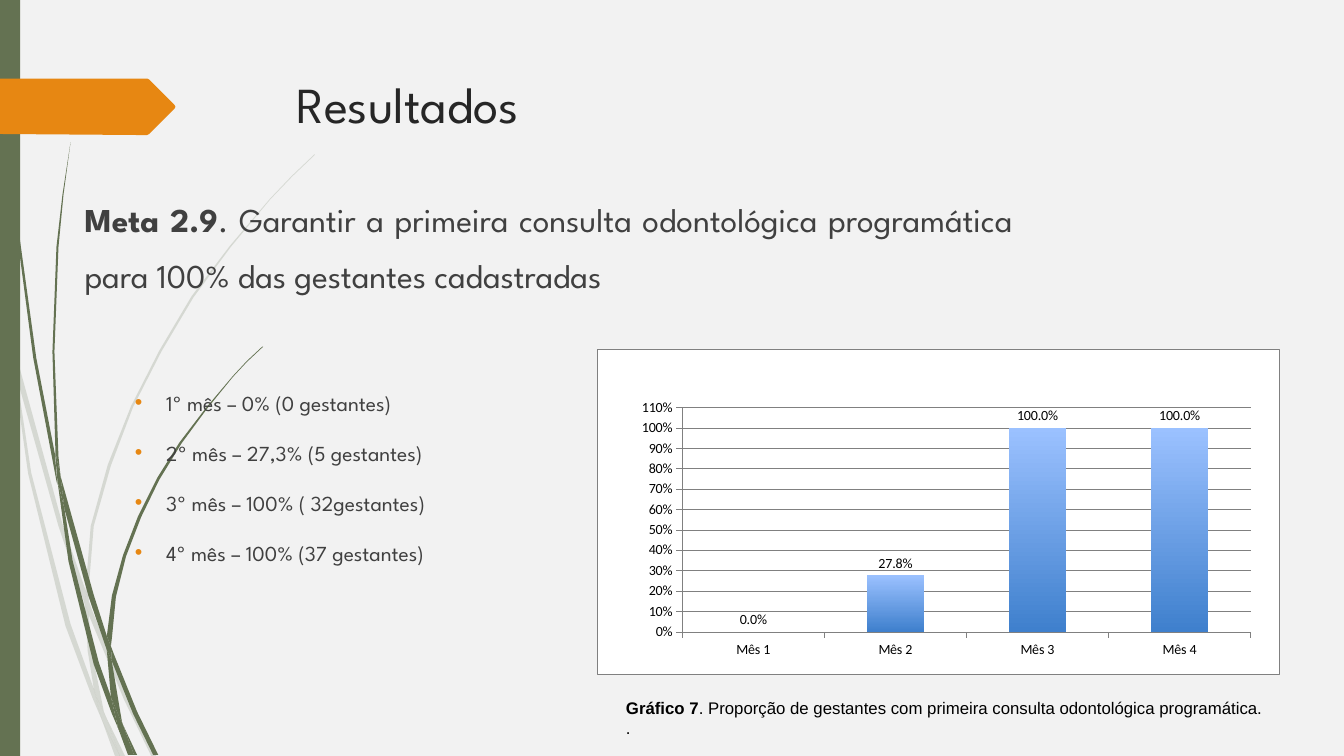
from dataclasses import dataclass

from lxml.etree import SubElement
from pptx import Presentation
from pptx.chart.data import CategoryChartData
from pptx.dml.color import RGBColor
from pptx.enum.chart import XL_CHART_TYPE as ChartType, XL_LABEL_POSITION as LabelPosition
from pptx.enum.chart import XL_TICK_MARK as TickMark
from pptx.enum.shapes import MSO_SHAPE as Preset
from pptx.enum.text import PP_ALIGN as Align
from pptx.oxml import parse_xml
from pptx.oxml.ns import nsdecls, qn
from pptx.util import Pt

PX = 9144
GREEN, ORANGE, GREY = "647252", "E78712", "808080"
BODY_GREY, BLACK, WHITE = "404040", "000000", "FFFFFF"
HEADING_FONT, CAPTION_FONT, CHART_FONT = "League Spartan", "Arial", "Calibri"
Points = tuple[tuple[int, int], ...]


@dataclass(frozen=True)
class Grass:
    opacity: int
    blades: tuple[Points, ...]


@dataclass(frozen=True)
class Style:
    font: str
    size: float
    color: str


@dataclass(frozen=True)
class Box:
    left: int
    top: int
    width: int
    height: int

    def emu(self) -> tuple[int, int, int, int]:
        return self.left * PX, self.top * PX, self.width * PX, self.height * PX


PALE_GRASS = Grass(20, (
    ((11, 350), (9, 322), (0, 282), (0, 299), (10, 344)),
    ((58, 522), (84, 599), (85, 586), (62, 520), (14, 345), (17, 376)),
    ((92, 607), (88, 596), (88, 610), (123, 694), (150, 750), (155, 750), (127, 692)),
    ((119, 750), (124, 750), (105, 711)),
    ((93, 683), (70, 619), (31, 469), (17, 376), (11, 350), (28, 470), (65, 621),
     (92, 693), (101, 714), (99, 707)),
    ((84, 599), (87, 646), (93, 683), (96, 692), (105, 711), (103, 706), (91, 646),
     (88, 610), (88, 608)),
    ((88, 584), (93, 522), (110, 462), (132, 404), (160, 349), (192, 295), (229, 245),
     (268, 198), (290, 175), (312, 154), (312, 153), (289, 175), (268, 197), (228, 244),
     (190, 294), (158, 348), (130, 403), (107, 461), (90, 522), (85, 584), (85, 586),
     (88, 596)),
    ((101, 714), (114, 750), (119, 750)),
    ((88, 608), (88, 610), (88, 596), (85, 586), (84, 599)),
    ((96, 692), (93, 683), (99, 707), (101, 714), (119, 750), (105, 711)),
))

DARK_GRASS = Grass(100, (
    ((7, 110), (17, 233), (33, 355), (56, 477), (57, 481), (55, 457), (55, 453),
     (36, 355), (19, 232), (8, 109), (5, 48), (4, 0), (3, 0), (4, 48)),
    ((88, 592), (106, 645), (106, 633), (106, 631), (93, 590), (60, 472), (64, 505)),
    ((113, 649), (110, 641), (111, 656), (132, 708), (152, 749), (157, 749), (136, 706)),
    ((110, 691), (98, 657), (72, 556), (64, 505), (57, 477), (68, 557), (93, 659),
     (111, 708), (117, 722), (116, 717)),
    ((60, 472), (58, 453), (54, 349), (58, 245), (63, 193), (70, 141), (62, 193),
     (56, 245), (52, 349), (55, 449)),
    ((133, 749), (136, 749), (122, 719)),
    ((57, 477), (64, 505), (60, 472), (55, 449), (55, 453)),
    ((111, 633), (115, 592), (125, 552), (140, 513), (158, 476), (180, 440), (205, 406),
     (231, 374), (245, 359), (261, 344), (260, 344), (245, 358), (231, 373), (204, 405),
     (178, 439), (156, 474), (137, 512), (122, 551), (111, 591), (106, 631), (110, 641)),
    ((117, 722), (127, 749), (131, 749)),
    ((106, 645), (110, 691), (116, 706), (122, 719), (121, 716), (111, 656), (109, 651)),
    ((106, 645), (109, 651), (111, 656), (110, 641), (106, 631), (106, 633)),
    ((116, 706), (110, 691), (116, 717), (117, 722), (130, 749), (133, 749), (122, 719)),
))

ARROW: Points = ((0, 78), (146, 78), (148, 79), (173, 104), (174, 106), (173, 108),
                 (148, 133), (146, 134), (136, 134), (0, 133))

MONTHLY_RESULTS = (
    "1º mês – 0% (0 gestantes)",
    "2º mês – 27,3% (5 gestantes)",
    "3º mês – 100% ( 32gestantes)",
    "4º mês – 100% (37 gestantes)",
)


def rgb(color: str) -> RGBColor:
    return RGBColor.from_string(color)


def paint(shape, color: str, opacity: int = 100) -> None:
    shape.shadow.inherit = False
    shape.fill.solid()
    shape.fill.fore_color.rgb = rgb(color)
    shape.line.fill.background()
    if opacity < 100:
        tint = shape.element.spPr.find(".//" + qn("a:srgbClr"))
        SubElement(tint, qn("a:alpha"), val=str(opacity * 1000))


def draw_outline(shapes, points: Points, color: str, opacity: int = 100) -> None:
    builder = shapes.build_freeform(*points[0], scale=PX)
    builder.add_line_segments(points[1:], close=True)
    paint(builder.convert_to_shape(), color, opacity)


def draw_grass(slide, grass: Grass) -> None:
    clump = slide.shapes.add_group_shape()
    for blade in grass.blades:
        draw_outline(clump.shapes, blade, GREEN, grass.opacity)


def add_frame(slide, box: Box):
    frame = slide.shapes.add_textbox(*box.emu()).text_frame
    frame.word_wrap = True
    return frame


def add_run(paragraph, text: str, style: Style, bold: bool = False) -> None:
    run = paragraph.add_run()
    run.text = text
    run.font.name, run.font.size, run.font.bold = style.font, Pt(style.size), bold
    run.font.color.rgb = rgb(style.color)


def space_body(paragraph, before: int) -> None:
    paragraph.alignment = Align.JUSTIFY
    paragraph.line_spacing = 1.4
    paragraph.space_before = Pt(before)


def add_bullet(paragraph) -> None:
    paragraph.level = 1
    props = paragraph._p.get_or_add_pPr()
    props.set("marL", str(81 * PX))
    props.set("indent", str(-31 * PX))
    SubElement(SubElement(props, qn("a:buClr")), qn("a:srgbClr"), val=ORANGE)
    SubElement(props, qn("a:buFont"), typeface="Arial")
    SubElement(props, qn("a:buChar"), char="•")


def area_format(border: str):
    return parse_xml(f'<c:spPr {nsdecls("c", "a")}><a:solidFill><a:srgbClr val="{WHITE}"/>'
                     f'</a:solidFill><a:ln w="3175">{border}</a:ln></c:spPr>')


def style_font(font) -> None:
    font.name, font.size, font.bold = CHART_FONT, Pt(10), False
    font.color.rgb = rgb(BLACK)


def style_line(line) -> None:
    line.color.rgb = rgb(GREY)
    line.width = Pt(0.25)


def draw_chart(slide, box: Box) -> None:
    data = CategoryChartData(number_format="0.0%")
    data.categories = [f"Mês {month}" for month in range(1, 5)]
    data.add_series("Series 1", (0, 0.278, 1, 1))
    chart = slide.shapes.add_chart(ChartType.COLUMN_CLUSTERED, *box.emu(), data).chart
    chart.has_title = chart.has_legend = False
    style_font(chart.font)
    months, share = chart.category_axis, chart.value_axis
    for axis in (months, share):
        axis.major_tick_mark, axis.minor_tick_mark = TickMark.OUTSIDE, TickMark.NONE
        style_font(axis.tick_labels.font)
        style_line(axis.format.line)
    share.minimum_scale, share.maximum_scale, share.major_unit = 0, 1.1, 0.1
    share.tick_labels.number_format, share.tick_labels.number_format_is_linked = "0%", False
    style_line(share.major_gridlines.format.line)

    plot = chart.plots[0]
    plot.gap_width, plot.vary_by_categories = 150, False
    columns = plot.series[0]
    columns.format.fill.gradient()
    columns.format.fill.gradient_angle = 270
    for stop, color in zip(columns.format.fill.gradient_stops, ("9BC1FF", "3F80CD")):
        stop.color.rgb = rgb(color)
    labels = columns.data_labels
    labels.show_value, labels.position = True, LabelPosition.OUTSIDE_END
    labels.number_format, labels.number_format_is_linked = "0.0%", False
    style_font(labels.font)

    space = chart.element
    grey_border = f'<a:solidFill><a:srgbClr val="{GREY}"/></a:solidFill>'
    space.find(qn("c:chart")).addnext(area_format(grey_border))
    plot_area = space.find(".//" + qn("c:plotArea"))
    plot_area.append(area_format("<a:noFill/>"))
    for automatic in plot_area.findall(qn("c:layout")):
        plot_area.remove(automatic)
    layout = parse_xml(f'<c:layout {nsdecls("c")}><c:manualLayout/></c:layout>')
    for tag, value in (("layoutTarget", "inner"), ("xMode", "edge"), ("yMode", "edge"),
                       ("x", "0.125"), ("y", "0.18"), ("w", "0.833"), ("h", "0.69")):
        SubElement(layout[0], qn(f"c:{tag}"), val=value)
    plot_area.insert(0, layout)


def main() -> None:
    deck = Presentation()
    deck.slide_width, deck.slide_height = 1333 * PX, 750 * PX
    slide = deck.slides.add_slide(deck.slide_layouts[6])
    slide.background.fill.solid()
    slide.background.fill.fore_color.rgb = rgb("F2F2F2")

    for grass in (PALE_GRASS, DARK_GRASS):
        draw_grass(slide, grass)
    paint(slide.shapes.add_shape(Preset.RECTANGLE, *Box(0, 0, 20, 750).emu()), GREEN)
    draw_outline(slide.shapes, ARROW, ORANGE)

    heading = add_frame(slide, Box(284, 68, 975, 140)).paragraphs[0]
    add_run(heading, "Resultados", Style(HEADING_FONT, 36, "262626"))

    body = add_frame(slide, Box(74, 177, 940, 424))
    goal, goal_style = body.paragraphs[0], Style(HEADING_FONT, 23.8, BODY_GREY)
    space_body(goal, 10)
    add_run(goal, "Meta 2.9", goal_style, bold=True)
    add_run(goal, ". Garantir a primeira consulta odontológica programática "
                  "para 100% das gestantes cadastradas", goal_style)
    for index, result in enumerate(MONTHLY_RESULTS):
        item = body.add_paragraph()
        space_body(item, 10 if index else 60)
        add_bullet(item)
        add_run(item, result, Style(HEADING_FONT, 15.3, BODY_GREY))

    draw_chart(slide, Box(592, 346, 677, 323))

    caption, caption_style = add_frame(slide, Box(611, 687, 698, 50)), Style(CAPTION_FONT, 12, BLACK)
    add_run(caption.paragraphs[0], "Gráfico 7", caption_style, bold=True)
    add_run(caption.paragraphs[0], ". Proporção de gestantes com primeira consulta "
                                   "odontológica programática.", caption_style)
    add_run(caption.add_paragraph(), ".", caption_style)
    deck.save("out.pptx")


if __name__ == "__main__":
    main()
